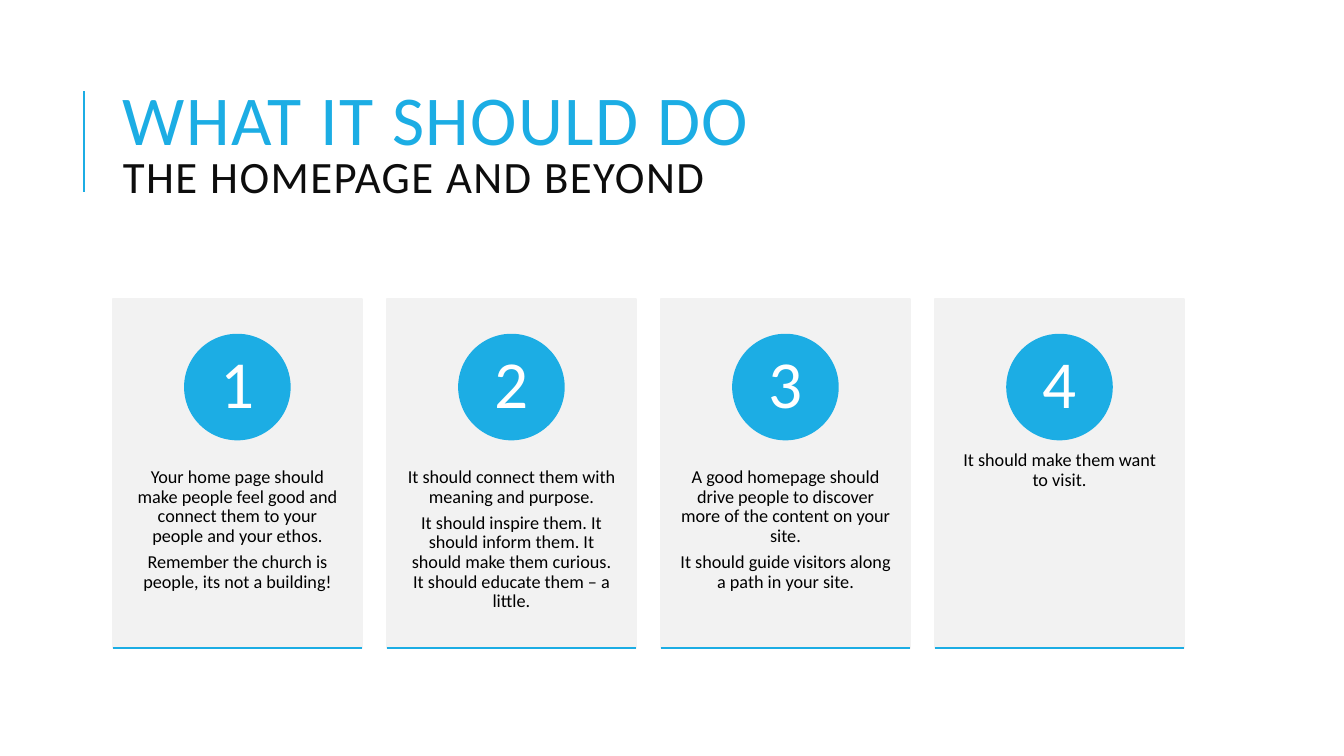
from dataclasses import dataclass

import pptx
import pptx.dml.color
import pptx.enum.shapes
import pptx.enum.text
import pptx.oxml.ns
import pptx.presentation
import pptx.shapes.autoshape
import pptx.slide
import pptx.text.text
import pptx.util
from lxml import etree

Pt = pptx.util.Pt
RGBColor = pptx.dml.color.RGBColor
MSO_SHAPE = pptx.enum.shapes.MSO_SHAPE
MSO_ANCHOR = pptx.enum.text.MSO_ANCHOR
PP_ALIGN = pptx.enum.text.PP_ALIGN

BLUE = RGBColor(0x1C, 0xAD, 0xE4)
GREY = RGBColor(0xF2, 0xF2, 0xF2)
NEAR_BLACK = RGBColor(0x0D, 0x0D, 0x0D)
BLACK = RGBColor(0, 0, 0)
WHITE = RGBColor(0xFF, 0xFF, 0xFF)
FONT = "Calibri"

# Card grid, in points
CARD_LEFT, CARD_TOP = 80.64, 213.84
CARD_WIDTH, CARD_HEIGHT = 177.84, 249.12
CARD_PITCH = 195.75
CIRCLE_TOP, CIRCLE_SIZE = 239.04, 74.88
ADVICE_TOP, ADVICE_HEIGHT = 308.16, 149.76


@dataclass(frozen=True)
class Card:
    number: int
    advice: tuple[str, ...]


CARDS = (
    Card(1, ("Your home page should make people feel good and connect them "
             "to your people and your ethos.",
             "Remember the church is people, its not a building!")),
    Card(2, ("It should connect them with meaning and purpose.",
             "It should inspire them. It should inform them. It should make "
             "them curious. It should educate them – a little.")),
    Card(3, ("A good homepage should drive people to discover more of the "
             "content on your site.",
             "It should guide visitors along a path in your site.")),
    Card(4, ("It should make them want to visit.",)),
)


def add_run(paragraph: pptx.text.text._Paragraph, text: str, size: float,
            color: RGBColor) -> pptx.text.text._Run:
    run = paragraph.add_run()
    run.text = text
    run.font.name = FONT
    run.font.size = Pt(size)
    run.font.color.rgb = color
    return run


def fill_frame(frame: pptx.text.text.TextFrame, texts: tuple[str, ...], size: float,
               color: RGBColor, side: float, edge: float) -> None:
    """Write centred paragraphs with the given side and top/bottom insets."""
    frame.word_wrap = True
    frame.margin_left = frame.margin_right = Pt(side)
    frame.margin_top = frame.margin_bottom = Pt(edge)
    for index, text in enumerate(texts):
        paragraph = frame.add_paragraph() if index else frame.paragraphs[0]
        paragraph.alignment = PP_ALIGN.CENTER
        paragraph.line_spacing = 0.9
        paragraph.space_after = Pt(round(size * 0.35, 2))
        add_run(paragraph, text, size, color)


def add_solid(slide: pptx.slide.Slide, kind: MSO_SHAPE, left: float, top: float,
              width: float, height: float,
              color: RGBColor) -> pptx.shapes.autoshape.Shape:
    solid = slide.shapes.add_shape(kind, Pt(left), Pt(top), Pt(width), Pt(height))
    solid.shadow.inherit = False
    solid.fill.solid()
    solid.fill.fore_color.rgb = color
    solid.line.color.rgb = color
    solid.line.width = Pt(1.25)
    return solid


def add_rule(slide: pptx.slide.Slide, x1: float, y1: float, x2: float, y2: float,
             width: float) -> None:
    rule = slide.shapes.add_connector(pptx.enum.shapes.MSO_CONNECTOR.STRAIGHT,
                                      Pt(x1), Pt(y1), Pt(x2), Pt(y2))
    rule.line.color.rgb = BLUE
    rule.line.width = Pt(width)
    etree.SubElement(rule._element.spPr, pptx.oxml.ns.qn("a:effectLst"))


def add_title(slide: pptx.slide.Slide) -> None:
    title = slide.shapes.title
    title.left, title.top = Pt(80.64), Pt(46.08)
    title.width, title.height = Pt(765.36), Pt(118.08)
    frame = title.text_frame
    frame.word_wrap = True
    frame.auto_size = pptx.enum.text.MSO_AUTO_SIZE.NONE
    frame.vertical_anchor = MSO_ANCHOR.MIDDLE
    heading = frame.paragraphs[0]
    heading.alignment = PP_ALIGN.LEFT
    heading.line_spacing = 0.8
    main_line = add_run(heading, "WHAT IT SHOULD DO", 50, BLUE)
    heading.add_line_break()
    second_line = add_run(heading, "THE HOMEPAGE AND BEYOND", 32, NEAR_BLACK)
    # Letter spacing of one point
    for run in (main_line, second_line):
        run.font._element.set("spc", "100")


def add_card(slide: pptx.slide.Slide, card: Card, left: float) -> None:
    add_solid(slide, MSO_SHAPE.RECTANGLE, left, CARD_TOP, CARD_WIDTH, CARD_HEIGHT, GREY)

    advice = slide.shapes.add_textbox(Pt(left), Pt(ADVICE_TOP),
                                      Pt(CARD_WIDTH), Pt(ADVICE_HEIGHT))
    fill_frame(advice.text_frame, card.advice, 13, BLACK, 13.68, 25.92)

    circle_left = left + (CARD_WIDTH - CIRCLE_SIZE) / 2
    circle = add_solid(slide, MSO_SHAPE.OVAL, circle_left, CIRCLE_TOP,
                       CIRCLE_SIZE, CIRCLE_SIZE, BLUE)
    circle.text_frame.vertical_anchor = MSO_ANCHOR.MIDDLE
    fill_frame(circle.text_frame, (str(card.number),), 48, WHITE, 5.76, 0.72)

    bottom = CARD_TOP + CARD_HEIGHT
    add_rule(slide, left, bottom, left + CARD_WIDTH, bottom, 1.25)


def main() -> None:
    deck = pptx.Presentation()
    deck.slide_width, deck.slide_height = Pt(960), Pt(540)
    slide = deck.slides.add_slide(deck.slide_layouts.get_by_name("Title Only"))

    # Heading with its accent rule
    add_rule(slide, 60, 136.8, 60, 64.8, 1.5)
    add_title(slide)

    # Numbered cards
    for index, card in enumerate(CARDS):
        add_card(slide, card, CARD_LEFT + index * CARD_PITCH)

    deck.save("out.pptx")


if __name__ == "__main__":
    main()
